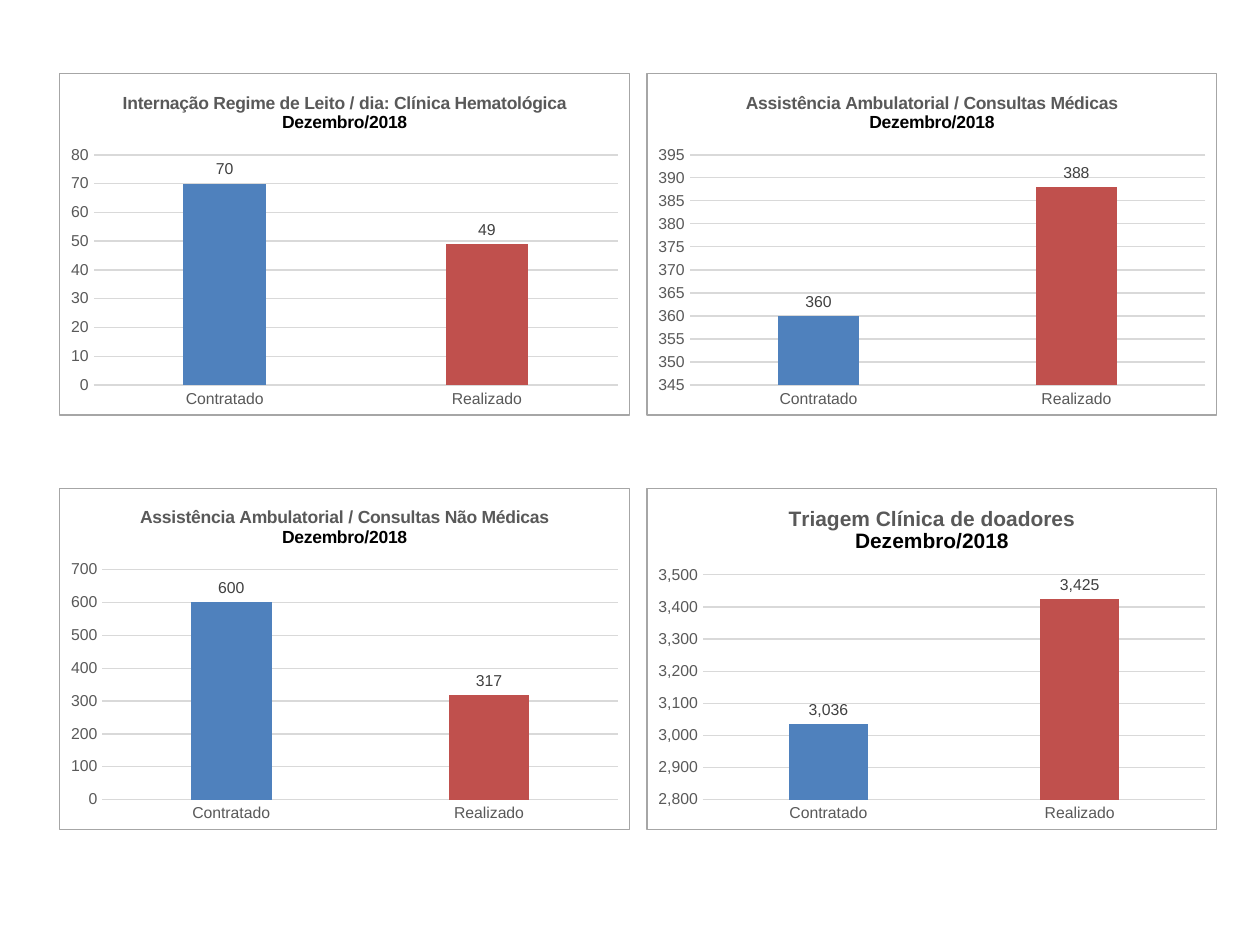
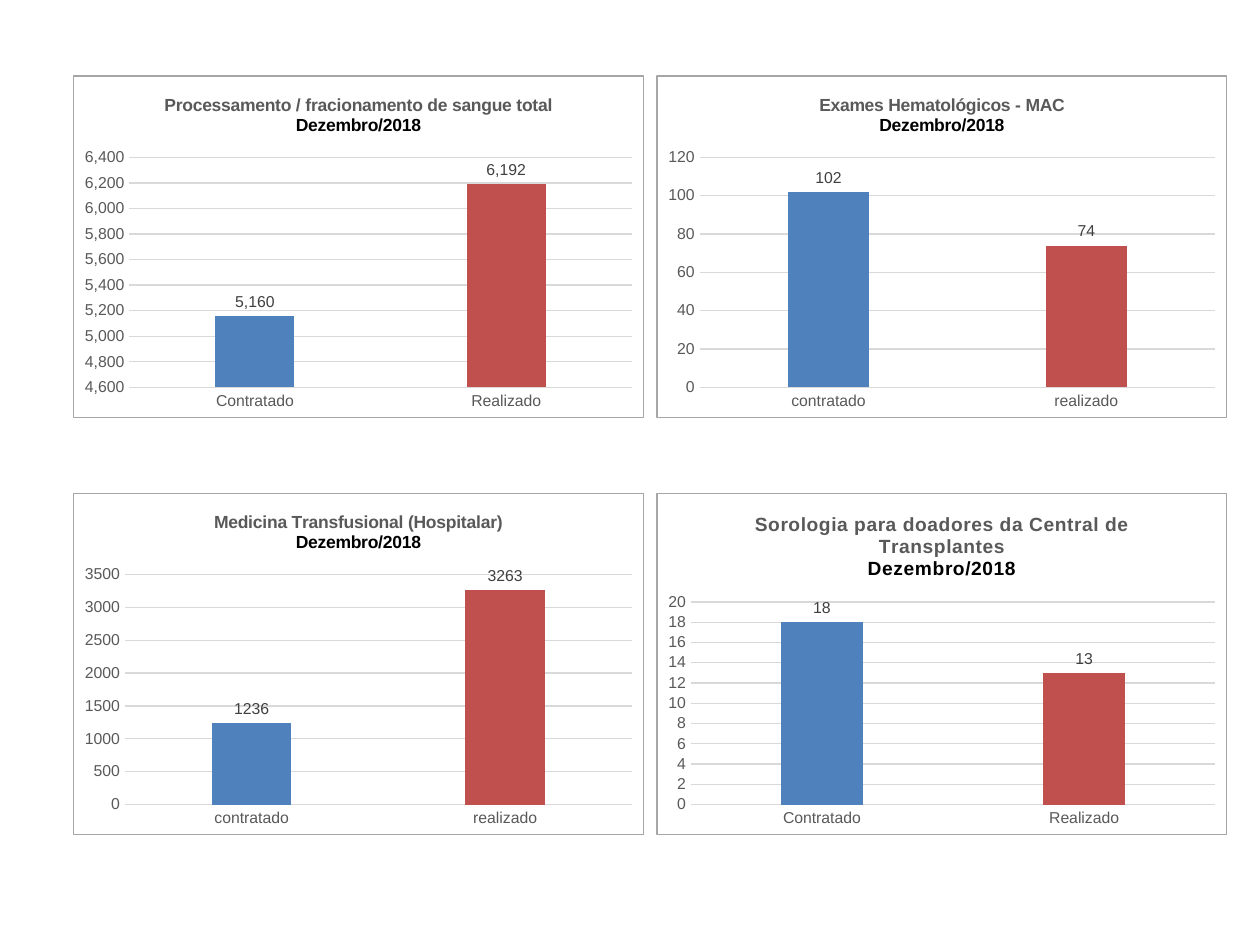
from dataclasses import dataclass

from lxml import etree
from pptx import Presentation
from pptx.chart.data import CategoryChartData
from pptx.dml.color import RGBColor
from pptx.enum.chart import XL_CHART_TYPE as ChartType
from pptx.enum.chart import XL_LABEL_POSITION as LabelPosition
from pptx.enum.chart import XL_TICK_MARK as TickMark
from pptx.util import Cm, Pt

COLORS = {
    "contracted": "4F81BD",
    "achieved": "C0504D",
    "title": "595959",
    "month": "000000",
    "axis": "595959",
    "label": "404040",
    "grid": "D9D9D9",
    "border": "A6A6A6",
    "background": "FFFFFF",
}
FONT = "Arial"
MONTH = "Dezembro/2018"
CAPITALIZED = ("Contratado", "Realizado")
LOWERCASE = ("contratado", "realizado")
CHART_WIDTH, CHART_HEIGHT = 11.51, 6.91  # centimetres

FRAME_XML = """
<c:spPr xmlns:c="http://schemas.openxmlformats.org/drawingml/2006/chart"
        xmlns:a="http://schemas.openxmlformats.org/drawingml/2006/main">
  <a:solidFill><a:srgbClr val="{background}"/></a:solidFill>
  <a:ln w="9525"><a:solidFill><a:srgbClr val="{border}"/></a:solidFill></a:ln>
</c:spPr>"""


@dataclass
class Goal:
    title: str
    values: tuple
    scale: tuple  # minimum, maximum, step
    categories: tuple = CAPITALIZED
    number_format: str = "General"
    title_size: int = 10
    spacing: int = 0  # letter spacing, hundredths of a point


@dataclass
class Grid:
    left: float
    top: float
    column_pitch: float
    row_pitch: float


HOSPITAL_GOALS = [
    Goal("Internação Regime de Leito / dia: Clínica Hematológica", (70, 49), (0, 80, 10)),
    Goal("Assistência Ambulatorial / Consultas Médicas", (360, 388), (345, 395, 5)),
    Goal("Assistência Ambulatorial / Consultas Não Médicas", (600, 317), (0, 700, 100)),
    Goal("Triagem Clínica de doadores", (3036, 3425), (2800, 3500, 100),
         number_format="#,##0", title_size=12),
]
BLOOD_GOALS = [
    Goal("Processamento / fracionamento de sangue total", (5160, 6192),
         (4600, 6400, 200), number_format="#,##0"),
    Goal("Exames Hematológicos - MAC", (102, 74), (0, 120, 20), LOWERCASE),
    Goal("Medicina Transfusional (Hospitalar)", (1236, 3263), (0, 3500, 500), LOWERCASE),
    Goal("Sorologia para doadores da Central de Transplantes", (18, 13), (0, 20, 2),
         title_size=11, spacing=20),
]


def rgb(name):
    return RGBColor.from_string(COLORS[name])


def style_font(font, size, color, bold=False):
    font.name = FONT
    font.size = Pt(size)
    font.bold = bold
    font.color.rgb = rgb(color)


def style_line(line, color):
    line.color.rgb = rgb(color)
    line.width = Pt(0.75)


def add_title(chart, goal):
    text_frame = chart.chart_title.text_frame
    text_frame.text = f"{goal.title}\n{MONTH}"
    chart.chart_title.include_in_layout = False
    for paragraph, color in zip(text_frame.paragraphs, ("title", "month")):
        run = paragraph.runs[0]
        style_font(run.font, goal.title_size, color, bold=True)
        if goal.spacing:
            run.font._element.set("spc", str(goal.spacing))


def style_axes(chart, goal):
    for axis in (chart.category_axis, chart.value_axis):
        axis.major_tick_mark = axis.minor_tick_mark = TickMark.NONE
        style_font(axis.tick_labels.font, 9, "axis")
    style_line(chart.category_axis.format.line, "grid")

    value_axis = chart.value_axis
    value_axis.minimum_scale, value_axis.maximum_scale, value_axis.major_unit = goal.scale
    value_axis.format.line.fill.background()
    value_axis.has_major_gridlines = True
    style_line(value_axis.major_gridlines.format.line, "grid")
    value_axis.tick_labels.number_format = goal.number_format
    value_axis.tick_labels.number_format_is_linked = False


def style_columns(chart, goal):
    plot = chart.plots[0]
    plot.gap_width = 219
    plot.overlap = -27
    plot.vary_by_categories = False
    series = plot.series[0]
    for target, color in ((series, "contracted"), (series.points[1], "achieved")):
        target.format.fill.solid()
        target.format.fill.fore_color.rgb = rgb(color)

    labels = series.data_labels
    labels.show_value = True
    labels.position = LabelPosition.OUTSIDE_END
    labels.number_format = goal.number_format
    labels.number_format_is_linked = False
    style_font(labels.font, 9, "label")


def add_goal_chart(slide, goal, left, top):
    data = CategoryChartData()
    data.categories = goal.categories
    data.add_series("Series 1", goal.values)
    chart = slide.shapes.add_chart(
        ChartType.COLUMN_CLUSTERED, Cm(left), Cm(top),
        Cm(CHART_WIDTH), Cm(CHART_HEIGHT), data).chart
    chart.has_legend = False
    style_font(chart.font, 10, "month")
    add_title(chart, goal)
    style_axes(chart, goal)
    style_columns(chart, goal)
    # Frame around the whole chart
    frame = etree.fromstring(FRAME_XML.format(**COLORS))
    chart.element.chart.addnext(frame)


def add_goal_slide(presentation, goals, grid):
    slide = presentation.slides.add_slide(presentation.slide_layouts[6])
    for index, goal in enumerate(goals):
        row, column = divmod(index, 2)
        add_goal_chart(slide, goal,
                       grid.left + column * grid.column_pitch,
                       grid.top + row * grid.row_pitch)


def main():
    presentation = Presentation()
    presentation.slide_width, presentation.slide_height = Cm(25.4), Cm(19.05)
    add_goal_slide(presentation, HOSPITAL_GOALS, Grid(1.19, 1.47, 11.84, 8.36))
    add_goal_slide(presentation, BLOOD_GOALS, Grid(1.47, 1.52, 11.76, 8.41))
    presentation.save("out.pptx")


if __name__ == "__main__":
    main()
